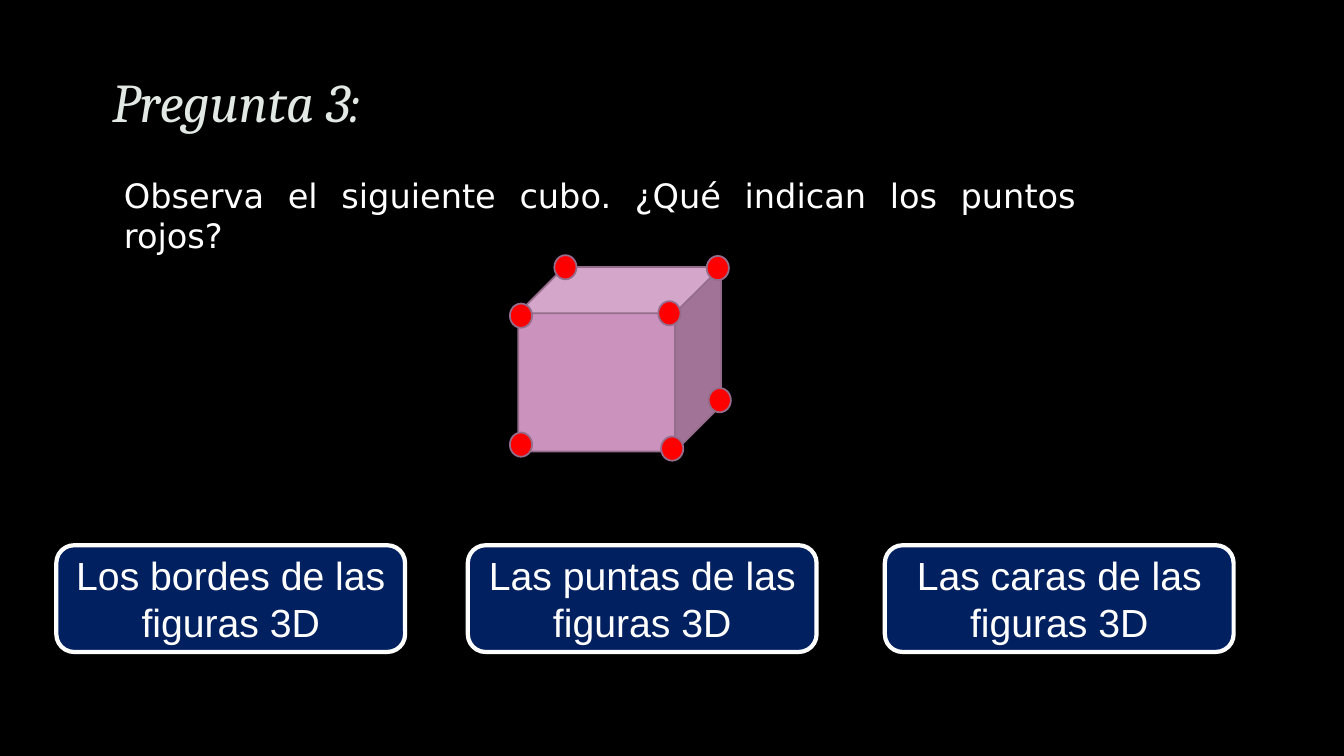
from dataclasses import dataclass

from lxml.etree import SubElement
from pptx import Presentation
from pptx.dml.color import RGBColor
from pptx.enum.shapes import MSO_SHAPE
from pptx.enum.text import MSO_ANCHOR, MSO_AUTO_SIZE, PP_ALIGN
from pptx.oxml.ns import qn
from pptx.shapes.autoshape import Shape
from pptx.slide import Slide
from pptx.text.text import TextFrame
from pptx.util import Cm, Pt

BLACK = RGBColor(0x00, 0x00, 0x00)
WHITE = RGBColor(0xFF, 0xFF, 0xFF)
PALE_GREEN = RGBColor(0xE2, 0xE8, 0xE3)
NAVY = RGBColor(0x00, 0x20, 0x60)
PINK = RGBColor(0xCA, 0x92, 0xBD)
MAUVE = RGBColor(0x95, 0x6C, 0x8C)
RED = RGBColor(0xFF, 0x00, 0x00)


@dataclass(frozen=True)
class Area:
    left: float
    top: float
    width: float
    height: float


@dataclass(frozen=True)
class TextStyle:
    font: str
    size: float
    color: RGBColor
    align: PP_ALIGN
    italic: bool = False


@dataclass(frozen=True)
class ShapeStyle:
    kind: MSO_SHAPE
    fill: RGBColor
    line: RGBColor
    line_width: float


@dataclass(frozen=True)
class Answer:
    left: float
    text: str


@dataclass(frozen=True)
class Vertex:
    left: float
    top: float


TITLE_AREA = Area(2.57, 1.09, 28.75, 3.1)
QUESTION_AREA = Area(2.87, 4.27, 24.51, 2.31)
CUBE_AREA = Area(13.06, 6.73, 5.11, 4.65)
ANSWER_TOP, ANSWER_WIDTH, ANSWER_HEIGHT = 13.74, 8.79, 2.69
VERTEX_WIDTH, VERTEX_HEIGHT = 0.56, 0.61

TITLE_TEXT = TextStyle("Cambria", 39, PALE_GREEN, PP_ALIGN.LEFT, italic=True)
QUESTION_TEXT = TextStyle("DejaVu Sans", 24, WHITE, PP_ALIGN.JUSTIFY)
ANSWER_TEXT = TextStyle("Arial", 28, WHITE, PP_ALIGN.CENTER)

ANSWER_STYLE = ShapeStyle(MSO_SHAPE.ROUNDED_RECTANGLE, NAVY, WHITE, 3)
CUBE_STYLE = ShapeStyle(MSO_SHAPE.CUBE, PINK, MAUVE, 1.25)
VERTEX_STYLE = ShapeStyle(MSO_SHAPE.OVAL, RED, MAUVE, 1.25)

ANSWERS = [
    Answer(1.42, "Los bordes de las figuras 3D"),
    Answer(11.79, "Las puntas de las figuras 3D"),
    Answer(22.3, "Las caras de las figuras 3D"),
]
VERTICES = [
    Vertex(13.97, 6.43),
    Vertex(16.66, 11.0),
    Vertex(12.85, 7.65),
    Vertex(16.59, 7.59),
    Vertex(17.81, 6.45),
    Vertex(12.85, 10.9),
    Vertex(17.86, 9.78),
]


def write_text(frame: TextFrame, text: str, style: TextStyle) -> None:
    frame.text = text
    frame.word_wrap = True
    frame.auto_size = MSO_AUTO_SIZE.NONE
    para = frame.paragraphs[0]
    para.alignment = style.align
    para.space_before = Pt(0)
    for span in para.runs:
        span.font.name = style.font
        span.font.size = Pt(style.size)
        span.font.italic = style.italic
        span.font.color.rgb = style.color


def place(box: Shape, area: Area) -> None:
    box.left, box.top = Cm(area.left), Cm(area.top)
    box.width, box.height = Cm(area.width), Cm(area.height)


def draw_shape(page: Slide, area: Area, style: ShapeStyle) -> Shape:
    box = page.shapes.add_shape(
        style.kind, Cm(area.left), Cm(area.top), Cm(area.width), Cm(area.height)
    )
    box.shadow.inherit = False
    box.fill.solid()
    box.fill.fore_color.rgb = style.fill
    box.line.color.rgb = style.line
    box.line.width = Pt(style.line_width)
    return box


def draw_title(page: Slide) -> None:
    title = page.shapes.title
    place(title, TITLE_AREA)
    write_text(title.text_frame, "Pregunta 3:", TITLE_TEXT)
    title.text_frame.vertical_anchor = MSO_ANCHOR.MIDDLE
    title.text_frame.paragraphs[0].line_spacing = 0.9


def draw_question(page: Slide) -> None:
    question = page.placeholders[1]
    place(question, QUESTION_AREA)
    write_text(
        question.text_frame,
        "Observa el siguiente cubo. ¿Qué indican los puntos rojos?",
        QUESTION_TEXT,
    )
    para = question.text_frame.paragraphs[0]
    para.space_after = Pt(6)
    properties = para._p.get_or_add_pPr()
    properties.set("marL", "0")
    properties.set("indent", "0")
    SubElement(properties, qn("a:buNone"))


def draw_answer(page: Slide, answer: Answer) -> None:
    area = Area(answer.left, ANSWER_TOP, ANSWER_WIDTH, ANSWER_HEIGHT)
    box = draw_shape(page, area, ANSWER_STYLE)
    write_text(box.text_frame, answer.text, ANSWER_TEXT)
    box.text_frame.vertical_anchor = MSO_ANCHOR.MIDDLE


def draw_cube(page: Slide) -> None:
    draw_shape(page, CUBE_AREA, CUBE_STYLE)
    for vertex in VERTICES:
        area = Area(vertex.left, vertex.top, VERTEX_WIDTH, VERTEX_HEIGHT)
        draw_shape(page, area, VERTEX_STYLE)


def main() -> None:
    deck = Presentation()
    deck.slide_width, deck.slide_height = Cm(33.87), Cm(19.05)
    page = deck.slides.add_slide(deck.slide_layouts[1])
    page.background.fill.solid()
    page.background.fill.fore_color.rgb = BLACK
    draw_title(page)
    for answer in ANSWERS:
        draw_answer(page, answer)
    draw_question(page)
    draw_cube(page)
    deck.save("out.pptx")


if __name__ == "__main__":
    main()
